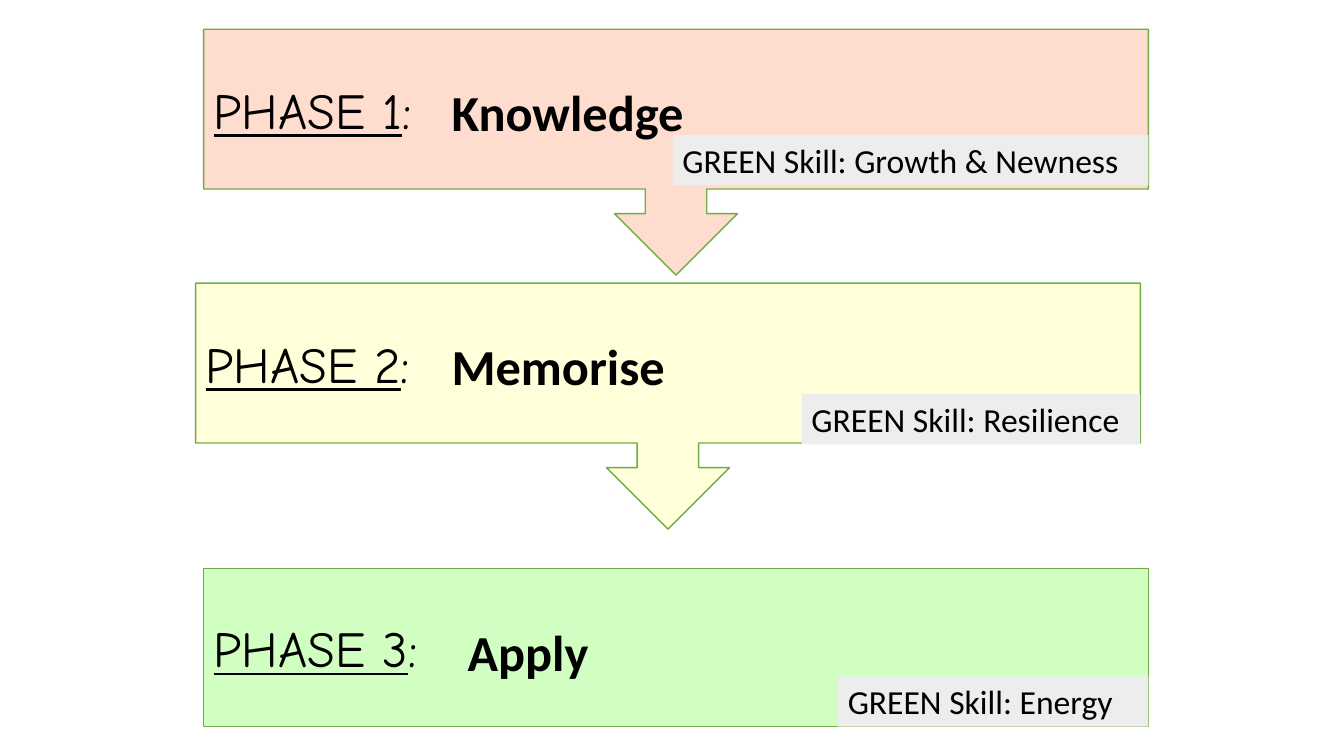
from pptx import Presentation
from pptx.dml.color import RGBColor
from pptx.enum.shapes import MSO_SHAPE as SHAPE
from pptx.enum.text import MSO_ANCHOR as ANCHOR, PP_ALIGN as ALIGN
from pptx.util import Inches, Pt

BLACK = RGBColor(0x00, 0x00, 0x00)
GREEN = RGBColor(0x70, 0xAD, 0x47)
GREY = RGBColor(0xED, 0xED, 0xED)
PEACH = RGBColor(0xFE, 0xDC, 0xCE)
YELLOW = RGBColor(0xFF, 0xFF, 0xD9)
MINT = RGBColor(0xD0, 0xFF, 0xC1)

PHASE_W, CALLOUT_H, BOX_H = 9.37, 2.44, 1.57
NAME_DY, NAME_H, BADGE_H = 0.47, 0.71, 0.5

# left, top, shape, height, fill, name, name offset, name width,
# skill, badge offset, badge width
PHASES = [
    (2.02, 0.29, SHAPE.DOWN_ARROW_CALLOUT, CALLOUT_H, PEACH,
     "Knowledge", 2.36, 2.65, "Growth & Newness", 1.05, 4.72),
    (1.94, 2.81, SHAPE.DOWN_ARROW_CALLOUT, CALLOUT_H, YELLOW,
     "Memorise", 2.44, 2.45, "Resilience", 1.1, 3.36),
    (2.02, 5.64, SHAPE.RECTANGLE, BOX_H, MINT,
     "Apply", 2.52, 1.53, "Energy", 1.07, 3.08),
]


def add_box(slide, kind, box, fill):
    sp = slide.shapes.add_shape(kind, *map(Inches, box))
    sp.shadow.inherit = False
    sp.fill.solid()
    sp.fill.fore_color.rgb = fill
    sp.line.fill.background()
    return sp


def write(sp, texts, size, font="Calibri", bold=False, anchor=ANCHOR.TOP):
    """Fill the shape with one left-aligned paragraph and return its runs."""
    tf = sp.text_frame
    tf.word_wrap = True
    tf.vertical_anchor = anchor
    p = tf.paragraphs[0]
    p.alignment = ALIGN.LEFT
    p.font.size, p.font.name, p.font.bold = Pt(size), font, bold
    p.font.color.rgb = BLACK
    runs = []
    for text in texts:
        r = p.add_run()
        r.text = text
        runs.append(r)
    return runs


def add_phase(slide, number, left, top, kind, height, fill,
              name, name_dx, name_w, skill, badge_dy, badge_w):
    sp = add_box(slide, kind, (left, top, PHASE_W, height), fill)
    sp.line.color.rgb = GREEN
    sp.line.width = Pt(1)
    label = write(sp, [f"PHASE {number}", ":"], 36, "Comic Neue",
                  anchor=ANCHOR.MIDDLE)[0]
    label.font.underline = True

    name_box = (left + name_dx, top + NAME_DY, name_w, NAME_H)
    write(slide.shapes.add_textbox(*map(Inches, name_box)), [name], 36, bold=True)

    badge_box = (left + PHASE_W - badge_w, top + badge_dy, badge_w, BADGE_H)
    badge = add_box(slide, SHAPE.RECTANGLE, badge_box, GREY)
    write(badge, [f"GREEN Skill: {skill}"], 24)


def main():
    prs = Presentation()
    prs.slide_width, prs.slide_height = Inches(13.33), Inches(7.5)
    slide = prs.slides.add_slide(prs.slide_layouts[6])
    for number, phase in enumerate(PHASES, 1):
        add_phase(slide, number, *phase)
    prs.save("out.pptx")


if __name__ == "__main__":
    main()
